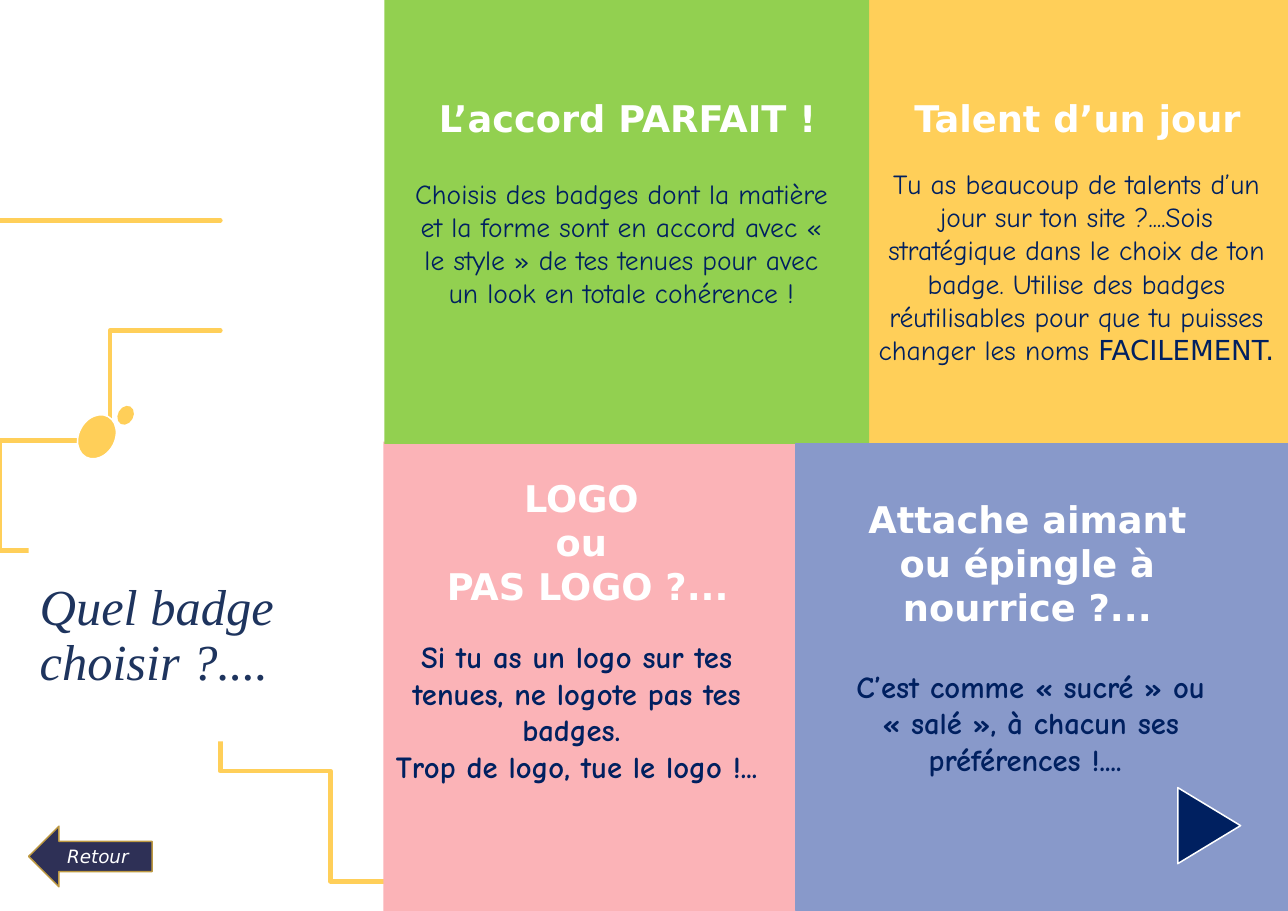
from pptx import Presentation
from pptx.dml.color import RGBColor
from pptx.enum.shapes import MSO_SHAPE
from pptx.enum.text import MSO_ANCHOR, MSO_AUTO_SIZE, PP_ALIGN
from pptx.oxml.ns import qn
from pptx.util import Inches, Pt

RECTANGLE, ELLIPSE = MSO_SHAPE.RECTANGLE, MSO_SHAPE.OVAL
LEFT_ARROW, TRIANGLE = MSO_SHAPE.LEFT_ARROW, MSO_SHAPE.ISOSCELES_TRIANGLE
LEFT, CENTER, MIDDLE = PP_ALIGN.LEFT, PP_ALIGN.CENTER, MSO_ANCHOR.MIDDLE
GROW = MSO_AUTO_SIZE.SHAPE_TO_FIT_TEXT

WHITE = RGBColor(0xFF, 0xFF, 0xFF)
YELLOW = RGBColor(0xFF, 0xCF, 0x59)
PINK = RGBColor(0xFB, 0xB3, 0xB7)
GREEN = RGBColor(0x92, 0xD0, 0x50)
BLUE = RGBColor(0x88, 0x99, 0xCA)
NAVY = RGBColor(0x00, 0x20, 0x60)
TITLE_BLUE = RGBColor(0x1E, 0x34, 0x5E)
ARROW_BLUE = RGBColor(0x2E, 0x30, 0x56)
GOLD = RGBColor(0xBD, 0x99, 0x42)

HEADING_FONT, BODY_FONT, TITLE_FONT = "DejaVu Sans", "Comic Neue", "Times New Roman"
CURVE_STEPS = 16

deck = Presentation()
deck.slide_width, deck.slide_height = Inches(11.69), Inches(8.27)
page = deck.slides.add_slide(deck.slide_layouts[5])


def add_filled_shape(kind, place, fill, outline=None, rotation=0):
    shape = page.shapes.add_shape(kind, *map(Inches, place))
    shape.shadow.inherit = False
    shape.rotation = rotation
    shape.fill.solid()
    shape.fill.fore_color.rgb = fill
    if outline is None:
        shape.line.fill.background()
    else:
        shape.line.color.rgb = outline
        shape.line.width = Pt(1)
    return shape


def add_span(para, text, font, size, color, bold=False, italic=False):
    span = para.add_run()
    span.text = text
    span.font.name, span.font.size = font, Pt(size)
    span.font.color.rgb = color
    span.font.bold, span.font.italic = bold, italic


# Each curve: a start point, then cubic segments (two handles and an end point)
curves = [
    ((-0.38, 1.56), [
        ((0.07, 1.69), (0.51, 1.83), (0.96, 2.0)),
        ((1.3, 2.13), (1.62, 2.27), (1.91, 2.45)),
    ]),
    ((2.14, 2.89), [
        ((1.75, 3.27), (1.2, 3.55), (0.5, 3.92)),
        ((0.2, 4.08), (-0.1, 4.2), (-0.09, 4.4)),
        ((-0.08, 4.65), (0.2, 4.86), (0.62, 5.16)),
        ((1.4, 5.7), (2.1, 6.27), (2.8, 6.98)),
        ((3.1, 7.28), (3.4, 7.6), (3.65, 7.91)),
    ]),
]
for start, segments in curves:
    points = [start]
    for handle_1, handle_2, end in segments:
        corners = (points[-1], handle_1, handle_2, end)
        for step in range(1, CURVE_STEPS + 1):
            t = step / CURVE_STEPS
            weights = ((1 - t) ** 3, 3 * t * (1 - t) ** 2, 3 * t * t * (1 - t), t ** 3)
            points.append(tuple(
                sum(weight * corner[axis] for weight, corner in zip(weights, corners))
                for axis in (0, 1)))
    builder = page.shapes.build_freeform(*start, scale=float(Inches(1)))
    builder.add_line_segments(points[1:], close=False)
    curve = builder.convert_to_shape()
    curve.shadow.inherit = False
    curve.fill.background()
    curve.line.color.rgb = YELLOW
    curve.line.width = Pt(3)
    curve.element.spPr.find(qn("a:ln")).set("cap", "rnd")

add_filled_shape(ELLIPSE, (0.67, 3.8, 0.42, 0.33), YELLOW, WHITE, 118.8)
add_filled_shape(ELLIPSE, (1.05, 3.7, 0.18, 0.14), YELLOW, rotation=118.8)

# Title, raised above the curves that it masks
title = page.shapes.title
page.shapes.element.append(title.element)
title.left, title.top = Inches(0.26), Inches(4.83)
title.width, title.height = Inches(3.21), Inches(1.9)
title.fill.solid()
title.fill.fore_color.rgb = WHITE
title.text_frame.word_wrap = True
title.text_frame.vertical_anchor = MIDDLE
title_para = title.text_frame.paragraphs[0]
title_para.alignment, title_para.line_spacing = LEFT, 0.9
add_span(title_para, "Quel badge choisir ?....", TITLE_FONT, 33, TITLE_BLUE, italic=True)

panels = [
    ((7.88, 0, 3.81, 4.04), YELLOW, None),
    ((3.48, 4.01, 3.75, 4.26), PINK, None),
    ((3.49, 0, 4.4, 4.03), GREEN, None),
    ((7.22, 4.03, 4.47, 4.23), BLUE, BLUE),
]
for place, fill, outline in panels:
    add_filled_shape(RECTANGLE, place, fill, outline)

heading = (HEADING_FONT, 24, WHITE, True)
body = (BODY_FONT, 18, NAVY)
bold_body = (BODY_FONT, 20, NAVY, True)
capitals = (HEADING_FONT, 18, NAVY)

# Each text: its place, then paragraphs made of (text, style) spans
texts = [
    ((3.49, 0.82, 4.41, 0.5), [[("L’accord PARFAIT !", heading)]]),
    ((3.66, 1.56, 3.96, 1.62), [[
        ("Choisis des badges dont la matière et la forme sont en accord avec "
         "« le style » de tes tenues pour avec un look en totale cohérence !", body)]]),
    ((3.56, 4.27, 3.55, 1.31), [
        [("LOGO ", heading)], [("ou ", heading)], [("PAS LOGO ?...", heading)]]),
    ((3.49, 5.74, 3.49, 1.11), [
        [("Si tu as un logo sur tes tenues, ne logote pas tes badges. ", bold_body)],
        [("Trop de logo, tue le logo !...", bold_body)]]),
    ((7.87, 0.82, 3.82, 0.5), [[("Talent d’un jour", heading)]]),
    ((7.86, 1.47, 3.82, 1.92), [[
        ("Tu as beaucoup de talents d’un jour sur ton site ?....Sois stratégique "
         "dans le choix de ton badge. Utilise des badges réutilisables pour que "
         "tu puisses changer les noms ", body),
        ("FACILEMENT.", capitals)]]),
    ((7.55, 4.46, 3.55, 1.31), [[("Attache aimant ou épingle à nourrice ?...", heading)]]),
    ((7.61, 6.01, 3.49, 1.11), [[
        ("C’est comme « sucré » ou « salé », à chacun ses préférences !.... ", bold_body)]]),
]
for place, paragraphs in texts:
    frame = page.shapes.add_textbox(*map(Inches, place)).text_frame
    frame.word_wrap = True
    frame.auto_size = GROW
    for index, spans in enumerate(paragraphs):
        para = frame.add_paragraph() if index else frame.paragraphs[0]
        para.alignment = CENTER
        for text, style in spans:
            add_span(para, text, *style)

back_arrow = add_filled_shape(LEFT_ARROW, (0.26, 7.5, 1.12, 0.55), ARROW_BLUE, GOLD)
back_arrow.text_frame.vertical_anchor = MIDDLE
back_para = back_arrow.text_frame.paragraphs[0]
back_para.alignment = CENTER
add_span(back_para, "Retour", HEADING_FONT, 12, WHITE, italic=True)

add_filled_shape(TRIANGLE, (10.63, 7.21, 0.69, 0.57), NAVY, WHITE, 90)

deck.save("out.pptx")
